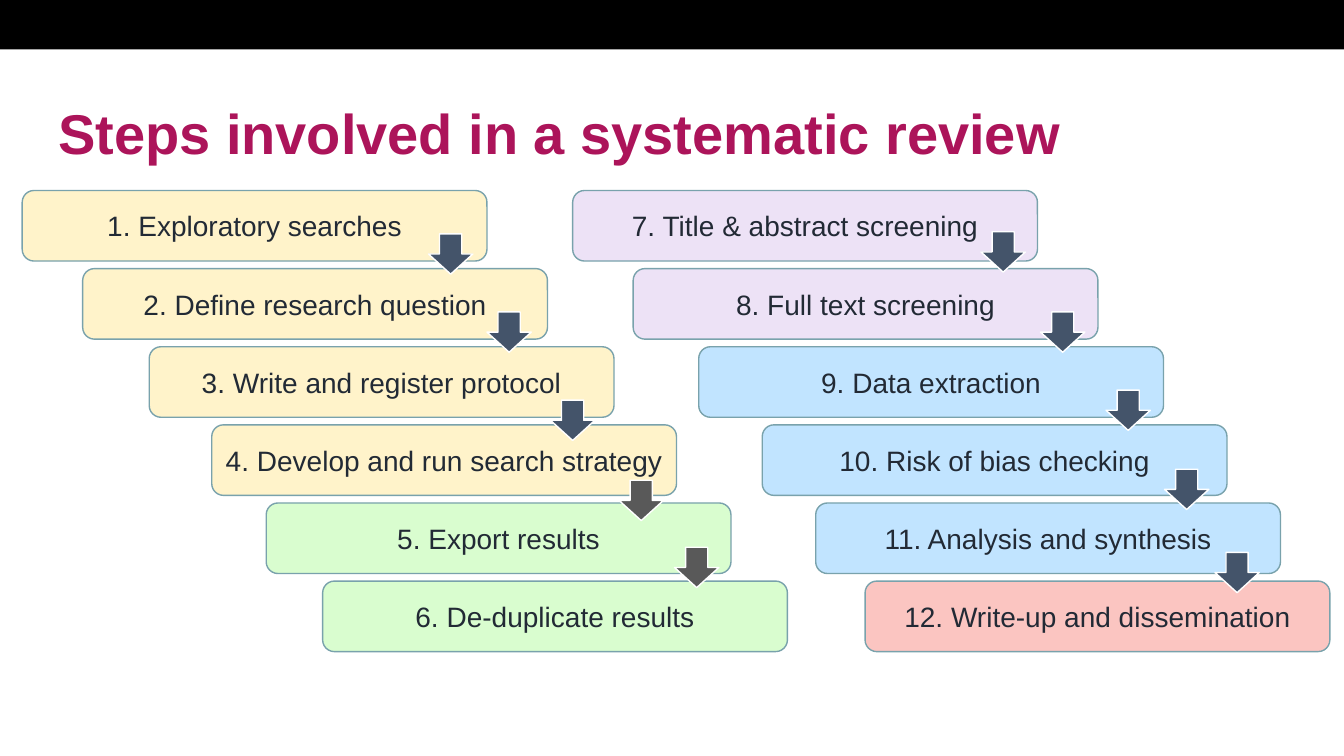
"""Build the slide showing the twelve steps of a systematic review."""
import pptx
import pptx.util
from pptx.dml.color import RGBColor
from pptx.enum.shapes import MSO_SHAPE
from pptx.enum.text import MSO_ANCHOR, PP_ALIGN

TITLE = "Steps involved in a systematic review"
COLOURS = {
    "banner": "000000", "title": "AC145A", "text": "222A35", "edge": "79A2AC",
    "planning": "FFF3CA", "records": "D9FDCF", "screening": "EDE2F6",
    "evidence": "C1E4FF", "report": "FBC5C1",
    "slate": "44546A", "grey": "595959", "white": "FFFFFF",
}
# Each step: wording, phase, indent, then its arrow's colour and offset in the box.
STAIRCASES = [
    (0.22, [
        ("1. Exploratory searches", "planning", 0, ("slate", 4.03, 0.43)),
        ("2. Define research question", "planning", 0.6, ("slate", 4.01, 0.43)),
        ("3. Write and register protocol", "planning", 1.26, ("slate", 3.98, 0.53)),
        ("4. Develop and run search strategy", "planning", 1.88, ("grey", 4.04, 0.55)),
        ("5. Export results", "records", 2.42, ("grey", 4.05, 0.44)),
        ("6. De-duplicate results", "records", 2.98, None),
    ]),
    (5.68, [
        ("7. Title & abstract screening", "screening", 0, ("slate", 4.05, 0.41)),
        ("8. Full text screening", "screening", 0.6, ("slate", 4.04, 0.43)),
        ("9. Data extraction", "evidence", 1.25, ("slate", 4.04, 0.43)),
        ("10. Risk of bias checking", "evidence", 1.88, ("slate", 3.99, 0.44)),
        ("11. Analysis and synthesis", "evidence", 2.41, ("slate", 3.96, 0.49)),
        ("12. Write-up and dissemination", "report", 2.9, None),
    ]),
]
SLIDE_WIDTH, SLIDE_HEIGHT = 13.33, 7.5
FIRST_ROW, ROW_PITCH = 1.89, 0.775
STEP_SIZE = (4.61, 0.7)
ARROW_SIZE = (0.44, 0.4)


def colour(name):
    return RGBColor.from_string(COLOURS[name])


def inches(*lengths):
    return [pptx.util.Inches(length) for length in lengths]


def add_block(slide, preset, place, fill, edge=None):
    block = slide.shapes.add_shape(preset, *inches(*place))
    block.shadow.inherit = False
    block.fill.solid()
    block.fill.fore_color.rgb = colour(fill)
    if edge:
        block.line.color.rgb = colour(edge)
        block.line.width = pptx.util.Pt(1)
    else:
        block.line.fill.background()
    return block


def write(frame, wording, size, ink, align, bold=False):
    frame.word_wrap = True
    frame.vertical_anchor = MSO_ANCHOR.MIDDLE
    paragraph = frame.paragraphs[0]
    paragraph.text = wording
    paragraph.alignment = align
    paragraph.font.name = "Arial"
    paragraph.font.size = pptx.util.Pt(size)
    paragraph.font.bold = bold
    paragraph.font.color.rgb = colour(ink)
    return paragraph


def add_staircase(slide, start, steps):
    arrows = []
    for row, (wording, phase, indent, arrow) in enumerate(steps):
        left, top = start + indent, FIRST_ROW + row * ROW_PITCH
        step = add_block(slide, MSO_SHAPE.ROUNDED_RECTANGLE,
                         (left, top, *STEP_SIZE), phase, "edge")
        step.text_frame.margin_left = step.text_frame.margin_right = pptx.util.Inches(0.05)
        write(step.text_frame, wording, 20, "text", PP_ALIGN.CENTER)
        if arrow:
            fill, across, down = arrow
            arrows.append(((left + across, top + down, *ARROW_SIZE), fill))
    for place, fill in arrows:
        add_block(slide, MSO_SHAPE.DOWN_ARROW, place, fill, "white")


def main():
    deck = pptx.Presentation()
    deck.slide_width, deck.slide_height = inches(SLIDE_WIDTH, SLIDE_HEIGHT)
    slide = deck.slides.add_slide(deck.slide_layouts[6])
    add_block(slide, MSO_SHAPE.RECTANGLE, (0, 0, SLIDE_WIDTH, 0.49), "banner")
    for start, steps in STAIRCASES:
        add_staircase(slide, start, steps)
    heading = slide.shapes.add_textbox(*inches(0.48, 0.97, 11.5, 0.76))
    write(heading.text_frame, TITLE, 40, "title", PP_ALIGN.LEFT, True).line_spacing = 0.9
    deck.save("out.pptx")


if __name__ == "__main__":
    main()
